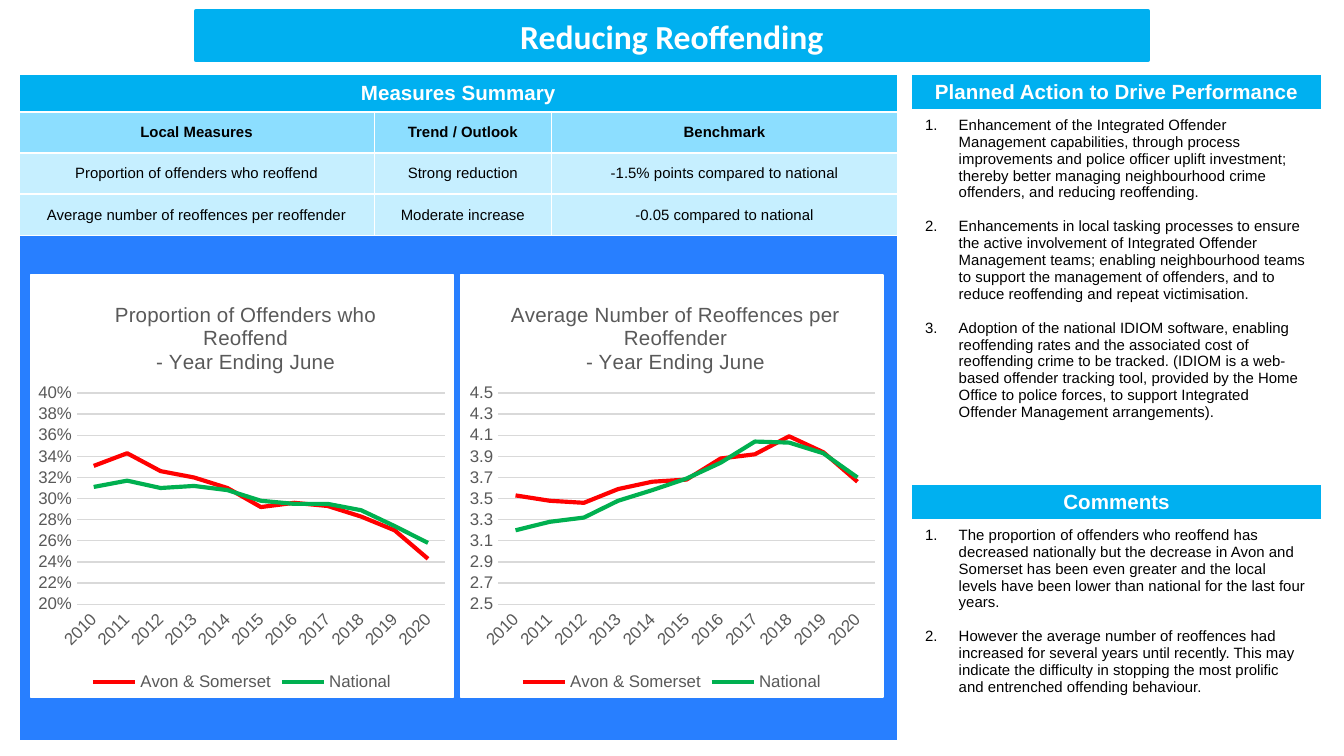
"""Build the Reducing Reoffending performance slide."""
from dataclasses import dataclass

from lxml import etree
from pptx import Presentation
from pptx.chart import data as chart_data
from pptx.dml.color import RGBColor
from pptx.enum import chart as ec, shapes, text
from pptx.oxml import ns, parse_xml
from pptx.util import Pt

BLUE = RGBColor(0x00, 0xB0, 0xF0)
PANEL = RGBColor(0x28, 0x7F, 0xFF)
HEADING = RGBColor(0x8C, 0xDE, 0xFF)
BODY = RGBColor(0xC6, 0xEF, 0xFF)
WHITE = RGBColor(0xFF, 0xFF, 0xFF)
BLACK = RGBColor(0x00, 0x00, 0x00)
GREY = RGBColor(0x59, 0x59, 0x59)
GRID = RGBColor(0xD9, 0xD9, 0xD9)
RED = RGBColor(0xFF, 0x00, 0x00)
GREEN = RGBColor(0x00, 0xB0, 0x50)

BANNER = {"size": Pt(18), "name": "Calibri", "bold": True}
HEADER = {"size": Pt(11), "name": "Arial", "bold": True}
STRONG = {"size": Pt(8), "name": "Arial", "bold": True}
PLAIN = {"size": Pt(8), "name": "Arial", "bold": False}
CHART_TITLE = {"size": Pt(11), "name": "Arial", "bold": False}
CHART_TEXT = {"size": Pt(9), "name": "Arial", "bold": False}

YEARS = [str(year) for year in range(2010, 2021)]
TOP = 39.6


@dataclass(frozen=True)
class NumberedPanel:
    title: str
    top: float
    body_height: float
    items: tuple[str, ...]


@dataclass(frozen=True)
class TrendChart:
    title: tuple[str, str]
    left: float
    title_x: float
    plot_x: float
    plot_width: float
    minimum: float
    maximum: float
    step: float
    number_format: str
    local: tuple[float, ...]
    national: tuple[float, ...]


MEASURES = (
    ("Local Measures", "Trend / Outlook", "Benchmark"),
    ("Proportion of offenders who reoffend", "Strong reduction", "-1.5% points compared to national"),
    ("Average number of reoffences per reoffender", "Moderate increase", "-0.05 compared to national"),
)

PANELS = (
    NumberedPanel("Planned Action to Drive Performance", TOP, 188, (
        "Enhancement of the Integrated Offender Management capabilities, through process improvements "
        "and police officer uplift investment; thereby better managing neighbourhood crime offenders, "
        "and reducing reoffending.",
        "Enhancements in local tasking processes to ensure the active involvement of Integrated Offender "
        "Management teams; enabling neighbourhood teams to support the management of offenders, and to "
        "reduce reoffending and repeat victimisation.",
        "Adoption of the national IDIOM software, enabling reoffending rates and the associated cost of "
        "reoffending crime to be tracked. (IDIOM is a web-based offender tracking tool, provided by the "
        "Home Office to police forces, to support Integrated Offender Management arrangements).",
    )),
    NumberedPanel("Comments", 259.2, 103, (
        "The proportion of offenders who reoffend has decreased nationally but the decrease in Avon and "
        "Somerset has been even greater and the local levels have been lower than national for the last "
        "four years.",
        "However the average number of reoffences had increased for several years until recently. This may "
        "indicate the difficulty in stopping the most prolific and entrenched offending behaviour.",
    )),
)

CHARTS = (
    TrendChart(
        ("Proportion of Offenders who Reoffend", "- Year Ending June"),
        16, 0.19, 0.11, 0.87, 0.2, 0.4, 0.02, "0%",
        (0.331, 0.343, 0.326, 0.32, 0.31, 0.292, 0.296, 0.293, 0.283, 0.27, 0.243),
        (0.311, 0.317, 0.31, 0.312, 0.308, 0.298, 0.295, 0.295, 0.289, 0.274, 0.258)),
    TrendChart(
        ("Average Number of Reoffences per Reoffender", "- Year Ending June"),
        246.3, 0.11, 0.09, 0.89, 2.5, 4.5, 0.2, "0.0",
        (3.53, 3.48, 3.46, 3.59, 3.66, 3.68, 3.88, 3.92, 4.09, 3.94, 3.66),
        (3.2, 3.28, 3.32, 3.48, 3.58, 3.69, 3.84, 4.04, 4.03, 3.93, 3.7)),
)


def format_font(font, values: dict, color: RGBColor) -> None:
    """Apply format values and a colour to a font."""
    for name, value in values.items():
        setattr(font, name, value)
    font.color.rgb = color


def write_centred(paragraph, words: str, values: dict, color: RGBColor) -> None:
    """Write one centred run."""
    paragraph.alignment = text.PP_ALIGN.CENTER
    run = paragraph.add_run()
    run.text = words
    format_font(run.font, values, color)


def fill_cell(cell, color: RGBColor, words: str = "", values: dict = PLAIN, ink: RGBColor = BLACK) -> None:
    """Fill a cell and write its centred text."""
    cell.fill.solid()
    cell.fill.fore_color.rgb = color
    cell.vertical_anchor = text.MSO_ANCHOR.MIDDLE
    if words:
        write_centred(cell.text_frame.paragraphs[0], words, values, ink)


def add_grid(slide, left: float, top: float, widths: tuple, heights: tuple):
    """Add an unbanded table with the given column and row sizes."""
    table = slide.shapes.add_table(len(heights), len(widths), Pt(left), Pt(top),
                                   Pt(sum(widths)), Pt(sum(heights))).table
    table.horz_banding = False
    for column, width in zip(table.columns, widths):
        column.width = Pt(width)
    for row, height in zip(table.rows, heights):
        row.height = Pt(height)
    return table


def add_measures(slide) -> None:
    """Add the measures table with the panel behind the charts."""
    table = add_grid(slide, 10.1, TOP, (190.5, 94.8, 185.6), (20.5, 22, 22, 22, 271))
    for row in (0, 4):
        table.cell(row, 0).merge(table.cell(row, 2))
    fill_cell(table.cell(0, 0), BLUE, "Measures Summary", HEADER, WHITE)
    fill_cell(table.cell(4, 0), PANEL)
    for row, record in enumerate(MEASURES, 1):
        color, values = (HEADING, STRONG) if row == 1 else (BODY, PLAIN)
        for column, words in enumerate(record):
            fill_cell(table.cell(row, column), color, words, values)


def add_banner(slide) -> None:
    """Add the slide title."""
    shape = slide.shapes.add_shape(shapes.MSO_SHAPE.RECTANGLE, Pt(105), Pt(5.8), Pt(510), Pt(26.6))
    shape.shadow.inherit = False
    shape.fill.solid()
    shape.fill.fore_color.rgb = shape.line.color.rgb = BLUE
    shape.line.width = Pt(2)
    frame = shape.text_frame
    for side in ("left", "top", "right", "bottom"):
        setattr(frame, f"margin_{side}", 0)
    frame.vertical_anchor = text.MSO_ANCHOR.MIDDLE
    write_centred(frame.paragraphs[0], "Reducing Reoffending", BANNER, WHITE)


def add_panel(slide, panel: NumberedPanel) -> None:
    """Add a headed table holding a numbered list."""
    table = add_grid(slide, 488.4, panel.top, (219.6,), (19.4, panel.body_height))
    fill_cell(table.cell(0, 0), BLUE, panel.title, HEADER, WHITE)
    body = table.cell(1, 0)
    body.fill.background()
    for index, item in enumerate(panel.items):
        frame = body.text_frame
        paragraph = frame.add_paragraph() if index else frame.paragraphs[0]
        properties = paragraph._p.get_or_add_pPr()
        properties.set("marL", str(Pt(18)))
        properties.set("indent", str(Pt(-18)))
        etree.SubElement(properties, ns.qn("a:buAutoNum"), type="arabicPeriod")
        if index:
            paragraph.space_before = Pt(9.2)
        run = paragraph.add_run()
        run.text = item
        format_font(run.font, PLAIN, BLACK)


def layout_xml(values: dict):
    """Return a manual chart layout."""
    marks = "".join(f'<c:{name} val="{value}"/>' for name, value in values.items())
    return parse_xml(f'<c:layout {ns.nsdecls("c")}><c:manualLayout>{marks}</c:manualLayout></c:layout>')


def place(element, values: dict, position: int) -> None:
    """Replace the layout of a chart part."""
    for previous in element.findall(ns.qn("c:layout")):
        element.remove(previous)
    element.insert(position, layout_xml({**values}))


def add_trend(slide, trend: TrendChart) -> None:
    """Add a line chart comparing local and national values."""
    data = chart_data.CategoryChartData(number_format=trend.number_format)
    data.categories = YEARS
    data.add_series("Avon & Somerset", trend.local)
    data.add_series("National", trend.national)
    chart = slide.shapes.add_chart(ec.XL_CHART_TYPE.LINE, Pt(trend.left), Pt(146.9),
                                   Pt(227.2), Pt(227), data).chart
    format_font(chart.font, {"size": Pt(10), "name": "Arial"}, BLACK)
    chart._chartSpace.chart.addnext(parse_xml(
        f'<c:spPr {ns.nsdecls("c", "a")}><a:solidFill><a:srgbClr val="{WHITE}"/></a:solidFill>'
        f'<a:ln w="9525"><a:solidFill><a:srgbClr val="{WHITE}"/></a:solidFill></a:ln></c:spPr>'))

    title = chart.chart_title
    frame = title.text_frame
    for paragraph, words in zip((frame.paragraphs[0], frame.add_paragraph()), trend.title):
        write_centred(paragraph, words, CHART_TITLE, GREY)
    title.include_in_layout = False
    place(title._element, {"xMode": "edge", "yMode": "edge", "x": trend.title_x, "y": 0.05}, 1)
    place(chart._chartSpace.chart.plotArea,
          {"layoutTarget": "inner", "xMode": "edge", "yMode": "edge", "x": trend.plot_x, "y": 0.28,
           "w": trend.plot_width, "h": 0.5}, 0)

    chart.has_legend = True
    chart.legend.position = ec.XL_LEGEND_POSITION.BOTTOM
    chart.legend.include_in_layout = False
    format_font(chart.legend.font, CHART_TEXT, GREY)
    for axis in (chart.category_axis, chart.value_axis):
        axis.major_tick_mark = axis.minor_tick_mark = ec.XL_TICK_MARK.NONE
        format_font(axis.tick_labels.font, CHART_TEXT, GREY)
    chart.category_axis.format.line.color.rgb = GRID
    axis = chart.value_axis
    scale = {"minimum_scale": trend.minimum, "maximum_scale": trend.maximum, "major_unit": trend.step}
    for name, value in scale.items():
        setattr(axis, name, value)
    axis.format.line.fill.background()
    axis.major_gridlines.format.line.color.rgb = GRID
    axis.major_gridlines.format.line.width = Pt(0.75)
    axis.tick_labels.number_format = trend.number_format
    axis.tick_labels.number_format_is_linked = False

    chart.plots[0].vary_by_categories = False
    for series, color in zip(chart.plots[0].series, (RED, GREEN)):
        series.smooth = False
        series.marker.style = ec.XL_MARKER_STYLE.NONE
        series.format.line.color.rgb = color
        series.format.line.width = Pt(2.25)


def main() -> None:
    """Build and save the presentation."""
    presentation = Presentation()
    presentation.slide_width, presentation.slide_height = Pt(720), Pt(405)
    slide = presentation.slides.add_slide(presentation.slide_layouts[6])
    add_measures(slide)
    add_banner(slide)
    for panel in PANELS:
        add_panel(slide, panel)
    for trend in CHARTS:
        add_trend(slide, trend)
    presentation.save("out.pptx")


if __name__ == "__main__":
    main()
